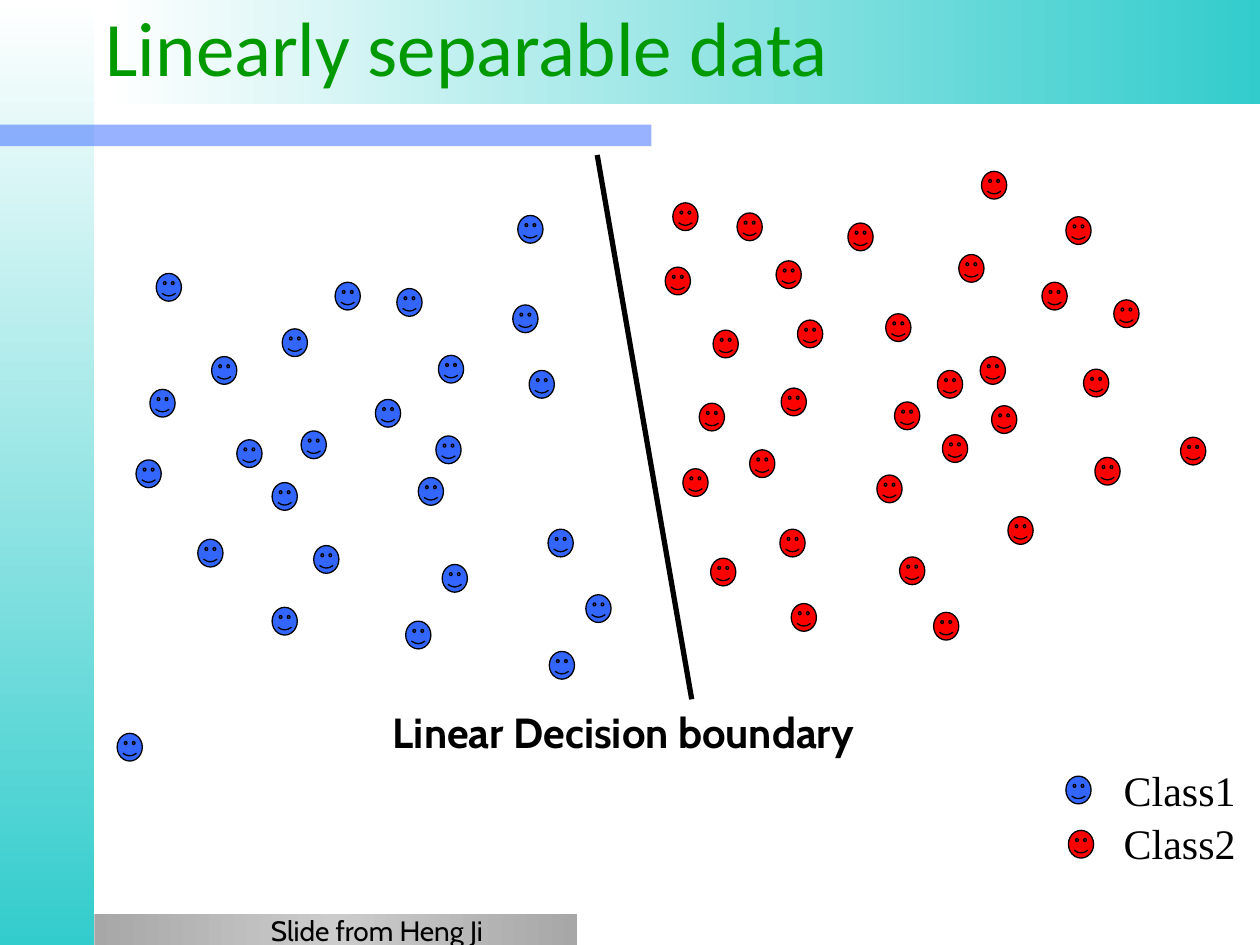
from lxml import etree
from pptx import Presentation
from pptx.dml.color import RGBColor
from pptx.enum.shapes import MSO_CONNECTOR, MSO_SHAPE
from pptx.enum.text import MSO_ANCHOR, MSO_AUTO_SIZE
from pptx.oxml.ns import qn
from pptx.util import Pt

PX = 9144
RECTANGLE = MSO_SHAPE.RECTANGLE
SMILEY = MSO_SHAPE.SMILEY_FACE
STRAIGHT = MSO_CONNECTOR.STRAIGHT
TOP, MIDDLE = MSO_ANCHOR.TOP, MSO_ANCHOR.MIDDLE
GROW, FIXED = MSO_AUTO_SIZE.SHAPE_TO_FIT_TEXT, MSO_AUTO_SIZE.NONE

COLORS = {
    "white": "FFFFFF",
    "teal": "33CCCC",
    "gray": "A7A7A7",
    "silver": "CCCCCC",
    "blue": "3366FF",
    "red": "FF0000",
    "green": "009900",
    "black": "000000",
}
FADE = [(0, "white"), (100, "teal")]
SHEEN = [(0, "gray"), (50, "silver"), (100, "gray")]

CLASS1_POINTS = [
    (224, 261), (266, 224), (315, 229), (157, 428), (119, 309), (348, 282),
    (216, 482), (124, 217), (168, 283), (108, 365), (346, 346), (322, 493),
    (332, 379), (420, 294), (351, 448), (249, 433), (298, 317), (93, 582),
    (465, 472), (436, 517), (411, 171), (239, 342), (188, 349), (216, 383),
    (407, 242), (435, 420),
]
CLASS2_POINTS = [
    (528, 212), (534, 161), (585, 169), (761, 202), (555, 320), (620, 308),
    (779, 136), (566, 262), (633, 254), (542, 372), (595, 357), (860, 293),
    (703, 249), (827, 224), (696, 377), (846, 172), (616, 207), (619, 420),
    (714, 442), (800, 410), (869, 363), (884, 238), (937, 347), (673, 177),
    (564, 443), (628, 479), (741, 486), (744, 294), (748, 345), (787, 322),
    (778, 283), (710, 319),
]


class SlideBuilder:
    def __init__(self, slide):
        self.shapes = slide.shapes

    def color(self, name):
        return RGBColor.from_string(COLORS[name])

    def band(self, left, top, width, height):
        band = self.shapes.add_shape(RECTANGLE, left * PX, top * PX, width * PX, height * PX)
        band.shadow.inherit = False
        band.line.fill.background()
        return band

    def gradient_band(self, left, top, width, height, stops, angle=0):
        band = self.band(left, top, width, height)
        band.fill.gradient()
        band.fill.gradient_angle = angle
        stop_list = band._element.spPr.find(qn("a:gradFill")).find(qn("a:gsLst"))
        for default_stop in list(stop_list):
            stop_list.remove(default_stop)
        for percent, name in stops:
            stop = etree.SubElement(stop_list, qn("a:gs"), pos=str(percent * 1000))
            etree.SubElement(stop, qn("a:srgbClr"), val=COLORS[name])

    def clear_band(self, left, top, width, height, name, opacity):
        band = self.band(left, top, width, height)
        band.fill.solid()
        band.fill.fore_color.rgb = self.color(name)
        tint = band._element.spPr.find(".//" + qn("a:srgbClr"))
        etree.SubElement(tint, qn("a:alpha"), val=str(opacity * 1000))

    def face(self, left, top, name):
        face = self.shapes.add_shape(SMILEY, left * PX, top * PX, 20 * PX, 22 * PX)
        face.adjustments[0] = 0.047
        face.shadow.inherit = False
        face.fill.solid()
        face.fill.fore_color.rgb = self.color(name)
        face.line.color.rgb = self.color("black")
        face.line.width = Pt(0.75)

    def line(self, start, end, name, width):
        line = self.shapes.add_connector(STRAIGHT, *(v * PX for v in start + end))
        line.line.color.rgb = self.color(name)
        line.line.width = Pt(width)
        etree.SubElement(line._element.spPr, qn("a:effectLst"))

    def text(self, left, top, width, height, words, font, size, name="black",
             bold=False, anchor=TOP, fit=GROW, inset=(10, 5)):
        box = self.shapes.add_textbox(left * PX, top * PX, width * PX, height * PX)
        frame = box.text_frame
        frame.word_wrap = True
        frame.auto_size = fit
        frame.vertical_anchor = anchor
        frame.margin_left = frame.margin_right = inset[0] * PX
        frame.margin_top = frame.margin_bottom = inset[1] * PX
        run = frame.paragraphs[0].add_run()
        run.text = words
        run.font.name = font
        run.font.size = Pt(size)
        run.font.bold = bold
        run.font.color.rgb = self.color(name)


def main():
    deck = Presentation()
    deck.slide_width, deck.slide_height = 1000 * PX, 750 * PX
    page = SlideBuilder(deck.slides.add_slide(deck.slide_layouts[6]))

    page.gradient_band(0, 0, 75, 750, FADE, angle=270)
    page.gradient_band(75, 725, 383, 25, SHEEN)
    page.gradient_band(84, 0, 916, 83, FADE)
    page.clear_band(0, 99, 517, 17, "blue", 50)
    page.text(74, -11, 899, 95, "Linearly separable data", "Calibri", 44, "green",
              anchor=MIDDLE, fit=FIXED)

    page.text(882, 602, 118, 50, "Class1", "Times New Roman", 24)
    page.text(882, 644, 118, 50, "Class2", "Times New Roman", 24)
    page.face(846, 616, "blue")
    page.face(848, 659, "red")

    for points, name in ((CLASS1_POINTS, "blue"), (CLASS2_POINTS, "red")):
        for left, top in points:
            page.face(left, top, name)

    page.line((474, 123), (549, 555), "black", 3)
    page.text(302, 556, 445, 50, "Linear Decision boundary", "Cabin", 24, bold=True)
    page.text(215, 725, 179, 22, "Slide from Heng Ji", "Cabin", 16, fit=FIXED, inset=(0, 0))

    deck.save("out.pptx")


if __name__ == "__main__":
    main()
